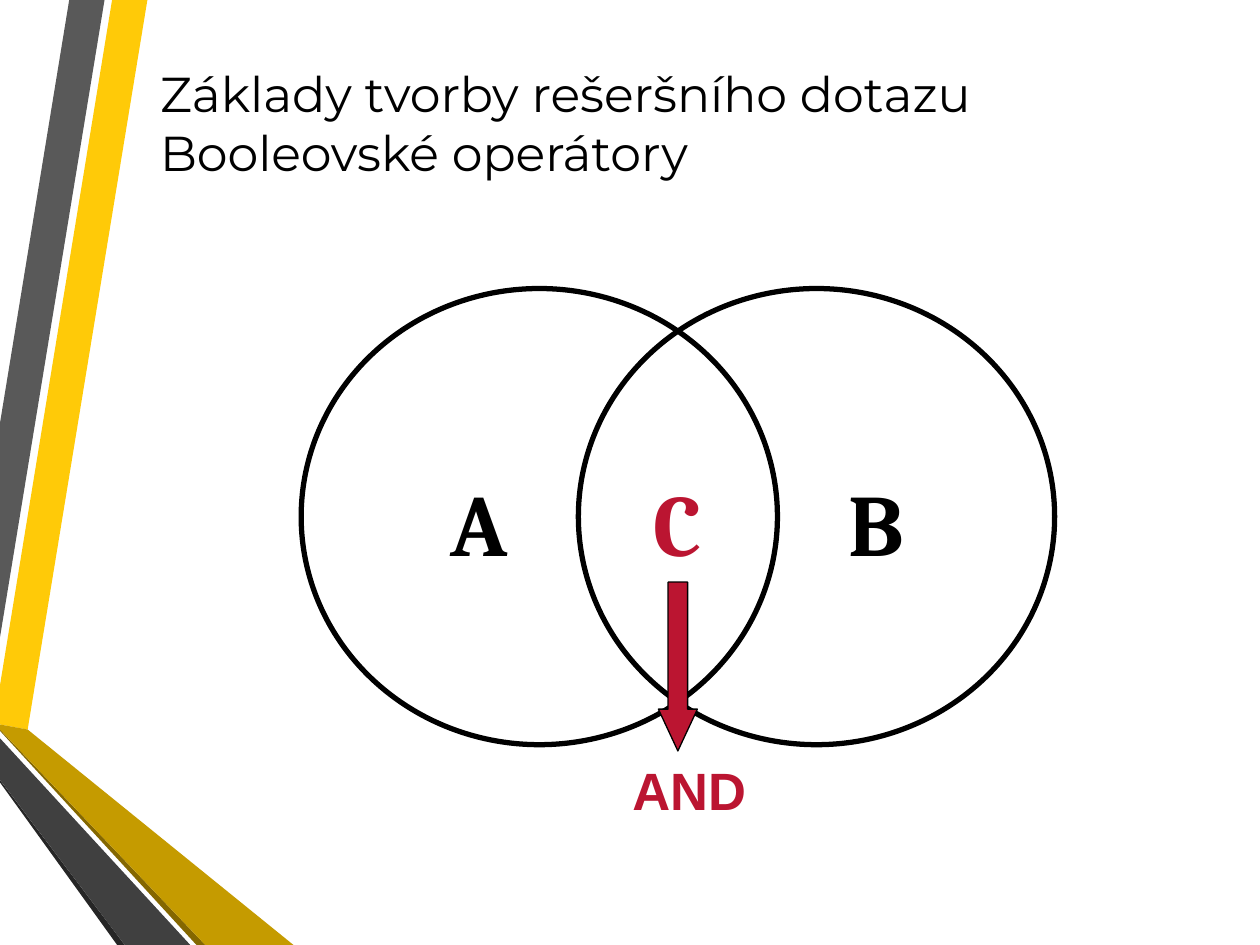
from pptx import Presentation, util as u
from pptx.dml.color import RGBColor
from pptx.enum import shapes, text

BLACK = RGBColor(0x00, 0x00, 0x00)
RED = RGBColor(0xBB, 0x15, 0x31)
YELLOW = RGBColor(0xFF, 0xCA, 0x08)
GOLD = RGBColor(0xC5, 0x9B, 0x00)
DARK_GOLD = RGBColor(0x84, 0x67, 0x00)
GRAY = RGBColor(0x59, 0x59, 0x59)
DARK_GRAY = RGBColor(0x40, 0x40, 0x40)
CHARCOAL = RGBColor(0x26, 0x26, 0x26)

presentation = Presentation()
presentation.slide_width, presentation.slide_height = u.Inches(10), u.Inches(7.5)
COLUMN = presentation.slide_width / 100
ROW = presentation.slide_height / 75
slide = presentation.slides.add_slide(presentation.slide_layouts[5])


def box(center, top, width, height):
    return (int((center - width / 2) * COLUMN), int(top * ROW),
            int(width * COLUMN), int(height * ROW))


def add_label(caption, area, font_name, size, color, wrap):
    label = slide.shapes.add_textbox(*area)
    label.text_frame.word_wrap = wrap
    paragraph = label.text_frame.paragraphs[0]
    paragraph.text = caption
    paragraph.alignment = text.PP_ALIGN.CENTER
    font = paragraph.font
    font.name, font.size, font.bold = font_name, u.Pt(size), True
    font.color.rgb = color


ribbons = [
    (YELLOW, [(0, 54.4), (0, 57.5), (2.2, 57.9), (11.7, 0), (8.9, 0)]),
    (GRAY, [(8.3, 0), (5.5, 0), (0, 33.6), (0, 50.6)]),
    (CHARCOAL, [(0, 61.9), (0, 62.1), (9.3, 75), (9.9, 75)]),
    (DARK_GOLD, [(0, 57.9), (0, 58), (15.6, 75), (16.3, 75)]),
    (GOLD, [(0, 57.9), (16.3, 75), (23.3, 75), (2.2, 57.9), (0, 57.5)]),
    (DARK_GRAY, [(0, 61.9), (9.9, 75), (15.1, 75), (0, 58.6)]),
]
for color, corners in ribbons:
    points = [(x * COLUMN, y * ROW) for x, y in corners]
    builder = slide.shapes.build_freeform(*points[0])
    builder.add_line_segments(points[1:], close=True)
    ribbon = builder.convert_to_shape()
    ribbon.shadow.inherit = False
    ribbon.fill.solid()
    ribbon.fill.fore_color.rgb = color
    ribbon.line.fill.background()

title = slide.shapes.title
title.left, title.top, title.width, title.height = box(53.85, 5, 84.3, 9.4)
title.text_frame.text = "Základy tvorby rešeršního dotazu\vBooleovské operátory"
title.text_frame.word_wrap = True
title.text_frame.auto_size = text.MSO_AUTO_SIZE.NONE
title.text_frame.vertical_anchor = text.MSO_ANCHOR.MIDDLE
paragraph = title.text_frame.paragraphs[0]
paragraph.alignment = text.PP_ALIGN.LEFT
paragraph.font.name, paragraph.font.size = "Montserrat", u.Pt(28)
paragraph.font.color.rgb = BLACK

AXIS = 53.8
for side in (-1, 1):
    circle = slide.shapes.add_shape(
        shapes.MSO_SHAPE.OVAL, *box(AXIS + side * 11, 22.9, 37.8, 36.2))
    circle.shadow.inherit = False
    circle.fill.background()
    circle.line.color.rgb, circle.line.width = BLACK, u.Pt(3)

arrow = slide.shapes.add_shape(shapes.MSO_SHAPE.DOWN_ARROW, *box(AXIS, 46.2, 3.1, 13.4))
arrow.adjustments[0], arrow.adjustments[1] = 0.5, 1.07
arrow.shadow.inherit = False
arrow.fill.solid()
arrow.fill.fore_color.rgb = RED
arrow.line.color.rgb, arrow.line.width = BLACK, u.Pt(0.75)

for step, (letter, color) in enumerate([("A", BLACK), ("C", RED), ("B", BLACK)], -1):
    add_label(letter, box(AXIS + step * 15.75, 36.7, 9.4, 9.3), "Cambria", 50, color, True)
add_label("AND", box(AXIS + 0.9, 59.7, 11, 6.1), "Arial", 30, RED, False)

presentation.save("out.pptx")
